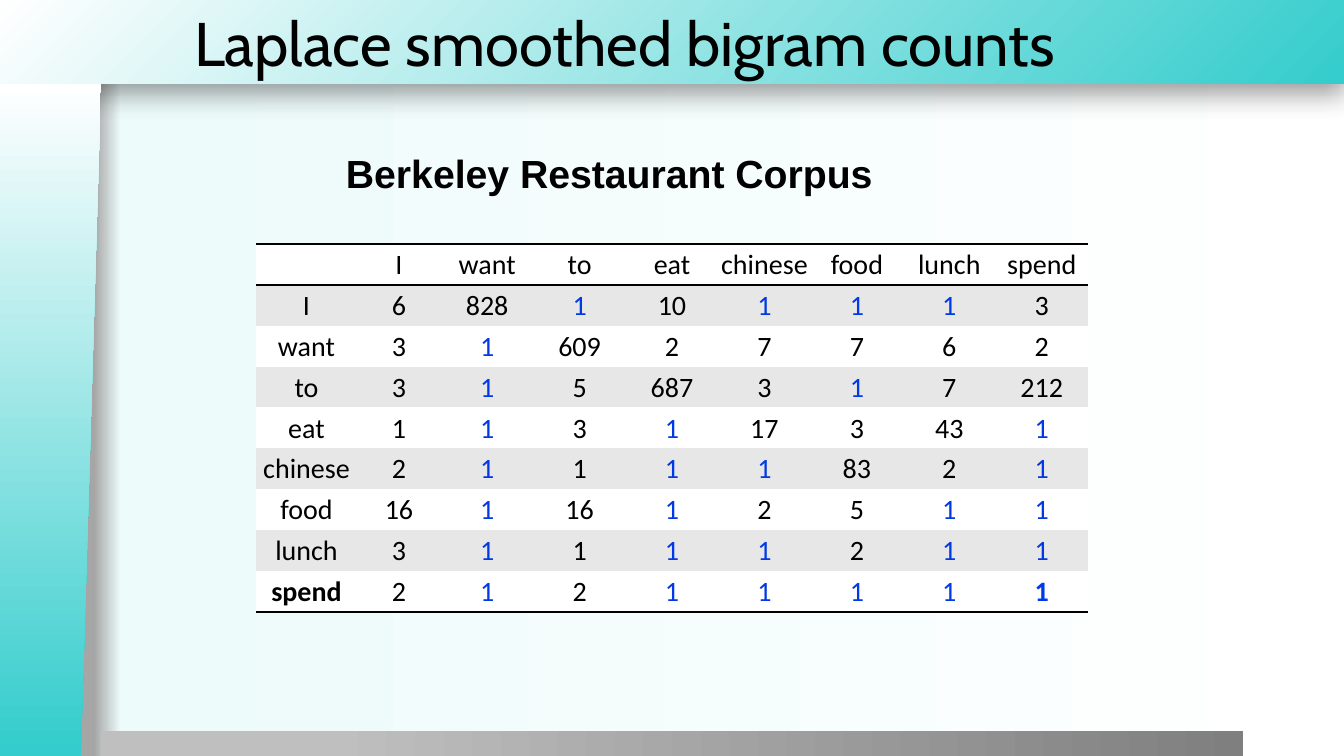
from pptx import Presentation
from pptx.dml.color import RGBColor
from pptx.enum.shapes import MSO_SHAPE as Kind
from pptx.enum.text import MSO_ANCHOR as Anchor, MSO_AUTO_SIZE as Auto, PP_ALIGN as Align
from pptx.oxml import parse_xml
from pptx.oxml.ns import nsdecls, qn
from pptx.util import Pt

SCALE = 914400 / 100.8
BLACK = RGBColor(0x00, 0x00, 0x00)
WHITE = RGBColor(0xFF, 0xFF, 0xFF)
BAND = RGBColor(0xE7, 0xE7, 0xE7)
BLUE = RGBColor(0x00, 0x39, 0xE5)
TEAL = RGBColor(0x34, 0xCC, 0xCC)
MINT = RGBColor(0xED, 0xFB, 0xFB)
SHADE = RGBColor(0xA6, 0xA6, 0xA6)
SILVER = RGBColor(0xBF, 0xBF, 0xBF)
GREY = RGBColor(0x7F, 0x7F, 0x7F)

LINEAR = '<a:lin ang="0" scaled="0"/>'
CORNER = '<a:path path="circle"><a:fillToRect l="100000" t="100000"/></a:path>'
NO_STYLE = "{2D5ABB26-0587-4C30-8999-92F81FD0307C}"

WORDS = ["I", "want", "to", "eat", "chinese", "food", "lunch", "spend"]
COUNTS = [
    [6, 828, 1, 10, 1, 1, 1, 3],
    [3, 1, 609, 2, 7, 7, 6, 2],
    [3, 1, 5, 687, 3, 1, 7, 212],
    [1, 1, 3, 1, 17, 3, 43, 1],
    [2, 1, 1, 1, 1, 83, 2, 1],
    [16, 1, 16, 1, 2, 5, 1, 1],
    [3, 1, 1, 1, 1, 2, 1, 1],
    [2, 1, 2, 1, 1, 1, 1, 1],
]
PLAIN = {("eat", "I"), ("chinese", "to"), ("lunch", "to")}


def px(size):
    return round(size * SCALE)


def grade(root, stops, mode=LINEAR):
    marks = "".join(
        f'<a:gs pos="{pos * 1000}"><a:srgbClr val="{color}"/></a:gs>' for pos, color in stops
    )
    fill = parse_xml(
        f'<a:gradFill {nsdecls("a")} rotWithShape="1"><a:gsLst>{marks}</a:gsLst>{mode}</a:gradFill>'
    )
    old = next(root.iter(qn("a:solidFill")))
    old.getparent().replace(old, fill)


def add_panel(slide, kind, box, stops, mode=LINEAR):
    panel = slide.shapes.add_shape(kind, *map(px, box))
    panel.shadow.inherit = False
    panel.line.fill.background()
    panel.fill.solid()
    grade(panel.element, stops, mode)
    return panel


def add_shade(panel):
    glow = next(panel.element.iter(qn("a:effectLst")))
    glow.append(parse_xml(
        f'<a:outerShdw {nsdecls("a")} blurRad="{Pt(20)}" dist="{Pt(6)}" dir="5400000" '
        f'algn="t" rotWithShape="0"><a:srgbClr val="{BLACK}"><a:alpha val="40000"/>'
        '</a:srgbClr></a:outerShdw>'
    ))


def set_text(frame, text, face, size, color=BLACK, bold=False, align=Align.LEFT):
    frame.text = text
    para = frame.paragraphs[0]
    para.alignment = align
    for run in para.runs:
        font = run.font
        font.name, font.size, font.bold = face, Pt(size), bold
        font.color.rgb = color


def add_rule(cell, side):
    rule = parse_xml(
        f'<a:{side} {nsdecls("a")} w="{Pt(2)}"><a:solidFill><a:srgbClr val="{BLACK}"/>'
        f'</a:solidFill></a:{side}>'
    )
    cell._tc.get_or_add_tcPr().insert(0, rule)


def set_cell(cell, text, fill, color, bold):
    cell.margin_left = cell.margin_right = cell.margin_top = px(1)
    cell.margin_bottom = 0
    cell.vertical_anchor = Anchor.MIDDLE
    cell.fill.solid()
    cell.fill.fore_color.rgb = fill
    set_text(cell.text_frame, text, "Calibri", 20, color, bold, Align.CENTER)


def add_counts(slide):
    grid = [["", *WORDS]] + [[word, *row] for word, row in zip(WORDS, COUNTS)]
    last = len(WORDS)
    box = map(px, (256, 244, 832, 368))
    table = slide.shapes.add_table(last + 1, last + 1, *box).table
    table.first_row = table.horz_banding = False
    table._tbl.tblPr.find(qn("a:tableStyleId")).text = NO_STYLE
    widths = [px(101), px(84)] + [px(647) // 7] * 7
    for col, width in zip(table.columns, widths):
        col.width = width
    for row in table.rows:
        row.height = px(368) // (last + 1)
    for r, line in enumerate(grid):
        for c, value in enumerate(line):
            cell = table.cell(r, c)
            blue = value == 1 and (line[0], grid[0][c]) not in PLAIN
            bold = r == last and c in (0, last)
            set_cell(cell, str(value), BAND if r % 2 else WHITE, BLUE if blue else BLACK, bold)
            if r in (0, last):
                add_rule(cell, "lnB")
            if r == 0:
                add_rule(cell, "lnT")


def add_decor(slide):
    slide.background.fill.solid()
    grade(slide.element, [(7, SHADE), (9, MINT), (100, WHITE)])
    banner = add_panel(slide, Kind.RECTANGLE, (-1, 0, 1345, 84),
                       [(0, TEAL), (100, WHITE)], CORNER)
    add_shade(banner)
    add_panel(slide, Kind.RECTANGLE, (101, 731, 1142, 26), [(20, SILVER), (100, GREY)])
    side = add_panel(slide, Kind.FLOWCHART_MANUAL_INPUT, (-286, 370, 673, 101),
                     [(1, TEAL), (100, WHITE)])
    side.rotation = 270
    side.element.spPr.find(qn("a:xfrm")).set("flipV", "1")


def add_title(slide, text):
    title = slide.shapes.title
    slide.shapes.element.append(title.element)
    title.left, title.top, title.width, title.height = map(px, (184, 0, 1160, 84))
    frame = title.text_frame
    frame.auto_size = Auto.NONE
    frame.vertical_anchor = Anchor.MIDDLE
    set_text(frame, text, "Cabin", 44)


def add_head(slide, text):
    frame = slide.shapes.add_textbox(*map(px, (336, 144, 588, 57))).text_frame
    frame.word_wrap = True
    frame.auto_size = Auto.SHAPE_TO_FIT_TEXT
    set_text(frame, text, "Arial", 28, bold=True)


def main():
    deck = Presentation()
    deck.slide_width, deck.slide_height = px(1344), px(756)
    slide = deck.slides.add_slide(deck.slide_layouts[5])
    add_decor(slide)
    add_title(slide, "Laplace smoothed bigram counts")
    add_head(slide, "Berkeley Restaurant Corpus")
    add_counts(slide)
    deck.save("out.pptx")


if __name__ == "__main__":
    main()
